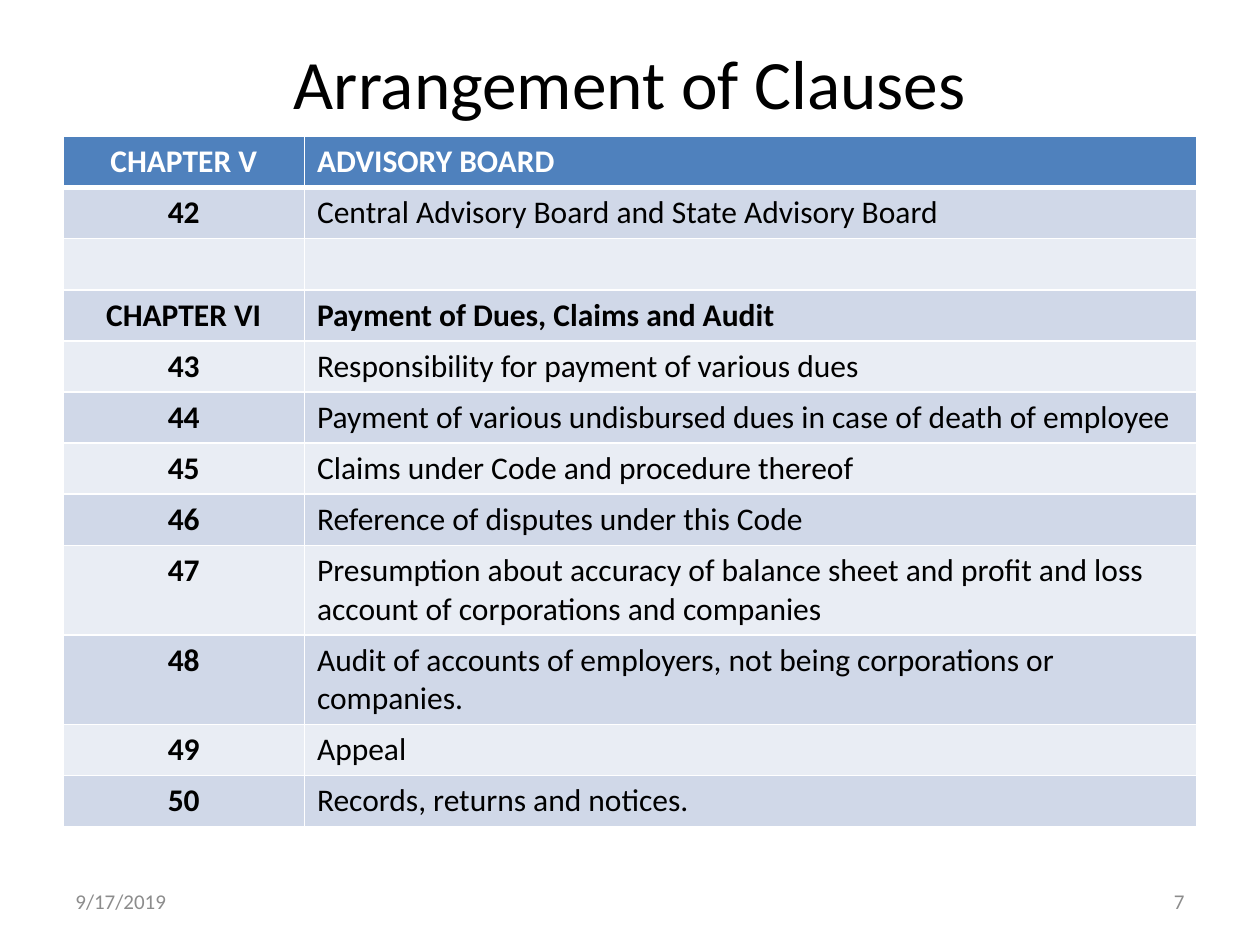
"""Build the slide listing the clauses of chapters V and VI."""
from lxml.etree import SubElement
from pptx import Presentation
from pptx.dml.color import RGBColor
from pptx.enum.text import MSO_ANCHOR as Anchor, PP_ALIGN as Align
from pptx.oxml.ns import qn
from pptx.util import Pt

WHITE = RGBColor(0xFF, 0xFF, 0xFF)
BLACK = RGBColor(0, 0, 0)
GRAY = RGBColor(0x8C, 0x8C, 0x8C)
BLUE = RGBColor(0x4F, 0x81, 0xBD)
BANDS = RGBColor(0xE9, 0xED, 0xF4), RGBColor(0xD0, 0xD8, 0xE8)

CLAUSES = [
    ("CHAPTER V", "ADVISORY BOARD"),
    ("42", "Central Advisory Board and State Advisory Board"),
    ("", ""),
    ("CHAPTER VI", "Payment of Dues, Claims and Audit"),
    ("43", "Responsibility for payment of various dues"),
    ("44", "Payment of various undisbursed dues in case of death of employee"),
    ("45", "Claims under Code and procedure thereof"),
    ("46", "Reference of disputes under this Code"),
    ("47", "Presumption about accuracy of balance sheet and profit and loss "
           "account of corporations and companies"),
    ("48", "Audit of accounts of employers, not being corporations or companies."),
    ("49", "Appeal"),
    ("50", "Records, returns and notices."),
]
TEXTS = [
    ("Arrangement of Clauses", (36, 21.6, 648, 50.4), Align.CENTER, 39.6, BLACK),
    ("9/17/2019", (36, 500.4, 168, 28.8), Align.LEFT, 12, GRAY),
    ("7", (516, 500.4, 168, 28.8), Align.RIGHT, 12, GRAY),
]
COLUMNS = 138, 510
LEFT, TOP = 36, 78
ROW, TALL_ROW, WRAP_AT = 29.2, 51.2, 65


def write(tf, text, align, size, color, bold=False):
    p = tf.paragraphs[0]
    p.alignment = align
    font = p.font
    if text:
        r = p.add_run()
        r.text = text
        font = r.font
    for name, value in {"name": "Calibri", "size": Pt(size), "bold": bold}.items():
        setattr(font, name, value)
    font.color.rgb = color


def add_border(cell, side, width):
    ln = SubElement(cell._tc.get_or_add_tcPr(), qn(f"a:ln{side}"), w=str(Pt(width)))
    fill = SubElement(ln, qn("a:solidFill"))
    SubElement(fill, qn("a:srgbClr"), val=str(WHITE))


def add_clause_table(s):
    heights = [TALL_ROW if len(title) > WRAP_AT else ROW for _, title in CLAUSES]
    size = LEFT, TOP, sum(COLUMNS), sum(heights)
    table = s.shapes.add_table(len(CLAUSES), len(COLUMNS), *map(Pt, size)).table
    for column, width in zip(table.columns, COLUMNS):
        column.width = Pt(width)
    for i, (clause, height) in enumerate(zip(CLAUSES, heights)):
        table.rows[i].height = Pt(height)
        heading = clause[0].startswith("CHAPTER")
        for j, text in enumerate(clause):
            cell = table.cell(i, j)
            for side in "LRTB":
                thick = (i, side) in ((0, "B"), (1, "T"))
                add_border(cell, side, 3 if thick else 1)
            cell.fill.solid()
            cell.fill.fore_color.rgb = BANDS[i % 2] if i else BLUE
            write(cell.text_frame, text, Align.LEFT if j else Align.CENTER, 18,
                  BLACK if i else WHITE, heading or j == 0)


def main():
    prs = Presentation()
    prs.slide_width, prs.slide_height = Pt(720), Pt(540)
    s = prs.slides.add_slide(prs.slide_layouts[6])
    add_clause_table(s)
    for text, box, *style in TEXTS:
        tf = s.shapes.add_textbox(*map(Pt, box)).text_frame
        tf.word_wrap = True
        tf.vertical_anchor = Anchor.MIDDLE
        write(tf, text, *style)
    prs.save("out.pptx")


if __name__ == "__main__":
    main()
